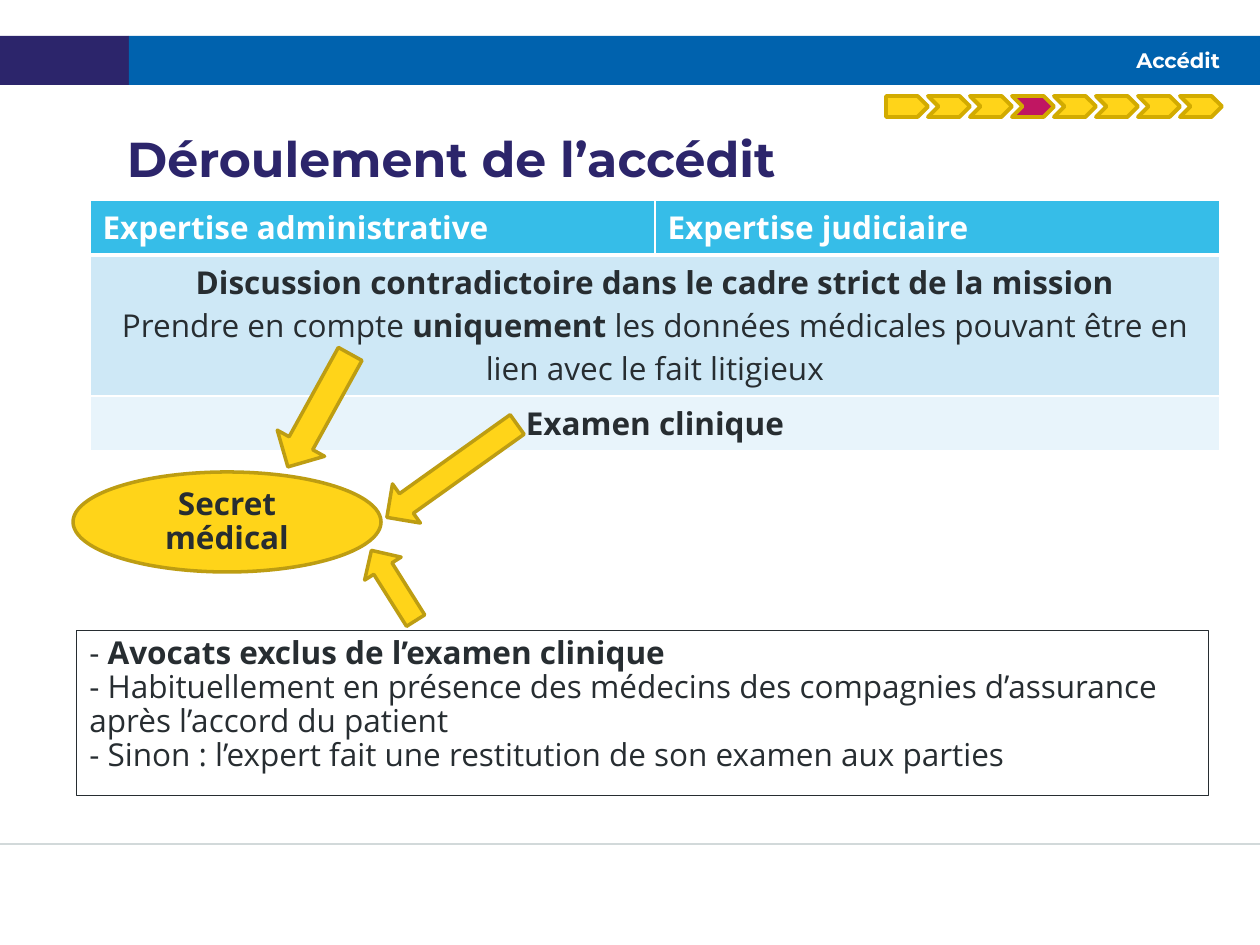
from lxml.etree import SubElement
from pptx import Presentation
from pptx.dml.color import RGBColor
from pptx.enum.shapes import MSO_CONNECTOR, MSO_SHAPE
from pptx.enum.text import MSO_ANCHOR, MSO_AUTO_SIZE, PP_ALIGN
from pptx.oxml import parse_xml
from pptx.oxml.ns import qn
from pptx.util import Pt

PX = 914400 / 126
NAVY, BLUE, WHITE, INK = "2C256B", "0062AE", "FFFFFF", "272D31"
YELLOW, GOLD, MAGENTA = "FFD419", "BD9D12", "C01662"
BODY = {"name": "Open Sans", "size": Pt(18), "bold": False}
BOLD = {**BODY, "bold": True}
TITLE = {"name": "Montserrat", "size": Pt(28), "bold": True}
HEADER = {**TITLE, "size": Pt(12)}
A_NS = "http://schemas.openxmlformats.org/drawingml/2006/main"


def px(n):
    return round(n * PX)


def rgb(value):
    return RGBColor.from_string(value)


def set_attrs(obj, values):
    for name, value in values.items():
        setattr(obj, name, value)


def write(tf, paragraphs, color, **para):
    """Each paragraph is a list of (text, font format) runs."""
    for i, runs in enumerate(paragraphs):
        p = tf.paragraphs[0] if i == 0 else tf.add_paragraph()
        set_attrs(p, para)
        for text, fmt in runs:
            r = p.add_run()
            r.text = text
            set_attrs(r.font, fmt)
            r.font.color.rgb = rgb(color)


def no_insets(tf):
    set_attrs(tf, {"margin_left": 0, "margin_top": 0, "margin_right": 0,
                   "margin_bottom": 0, "word_wrap": True})


def add_shape(s, kind, box, fill=None, line=None, width=2, rotation=0):
    sp = s.shapes.add_shape(kind, *map(px, box))
    sp.shadow.inherit = False
    sp.rotation = rotation
    if fill:
        sp.fill.solid()
        sp.fill.fore_color.rgb = rgb(fill)
    else:
        sp.fill.background()
    if line:
        sp.line.color.rgb = rgb(line)
        sp.line.width = Pt(width)
    else:
        sp.line.fill.background()
    return sp


def add_rule(s, x1, y1, x2, y2, color):
    line = s.shapes.add_connector(MSO_CONNECTOR.STRAIGHT, *map(px, (x1, y1, x2, y2)))
    line.line.color.rgb = rgb(color)
    line.line.width = Pt(0.75)
    SubElement(line.element.spPr, qn("a:effectLst"))


def style_cell(cell, fill, bottom):
    tc_pr = cell._tc.get_or_add_tcPr()
    for side, width in (("L", 1), ("R", 1), ("T", 1), ("B", bottom)):
        tc_pr.append(parse_xml(
            f'<a:ln{side} xmlns:a="{A_NS}" w="{Pt(width)}"><a:solidFill>'
            f'<a:srgbClr val="{WHITE}"/></a:solidFill></a:ln{side}>'))
    cell.fill.solid()
    cell.fill.fore_color.rgb = rgb(fill)


def add_comparison(s):
    table = s.shapes.add_table(3, 2, *map(px, (90, 200, 1130, 228))).table
    for col in table.columns:
        col.width = px(565)
    for row, height in zip(table.rows, (55, 141, 55)):
        row.height = px(height)
    for row, fill, bottom in ((0, "36BDE8", 3), (1, "CEE8F6", 1), (2, "E8F4FB", 1)):
        if row:
            table.cell(row, 0).merge(table.cell(row, 1))
        for col in range(2):
            style_cell(table.cell(row, col), fill, bottom)

    for col, text in enumerate(("Expertise administrative", "Expertise judiciaire")):
        write(table.cell(0, col).text_frame, [[(text, BOLD)]], WHITE)
    discussion = [
        [("Discussion contradictoire dans le cadre strict de la mission", BOLD)],
        [("Prendre en compte ", BODY), ("uniquement ", BOLD),
         ("les données médicales pouvant être en lien avec le fait litigieux", BODY)],
    ]
    for row, paragraphs in ((1, discussion), (2, [[("Examen clinique", BOLD)]])):
        write(table.cell(row, 0).text_frame, paragraphs, INK, alignment=PP_ALIGN.CENTER)


def add_progress(s, steps=8, current=3):
    for i in range(steps):
        kind = MSO_SHAPE.CHEVRON if i else MSO_SHAPE.PENTAGON
        fill = MAGENTA if i == current else YELLOW
        add_shape(s, kind, (886 + 42 * i, 96, 42, 21), fill, "D2AB00", 2.25)


def place_title(s):
    title = s.shapes.title
    set_attrs(title, {"left": px(139), "top": px(36), "width": px(1081), "height": px(49)})
    # Bring the title in front of the bars
    title.element.getparent().append(title.element)
    tf = title.text_frame
    no_insets(tf)
    set_attrs(tf, {"vertical_anchor": MSO_ANCHOR.MIDDLE, "auto_size": MSO_AUTO_SIZE.NONE})
    write(tf, [[("Accédit", HEADER)]], WHITE, alignment=PP_ALIGN.RIGHT)


def add_heading(s):
    tf = s.shapes.add_textbox(*map(px, (127, 135, 1093, 64))).text_frame
    no_insets(tf)
    write(tf, [[("Déroulement de l’accédit", TITLE)]], NAVY, line_spacing=0.9)


def add_note(s):
    sp = add_shape(s, MSO_SHAPE.RECTANGLE, (77, 631, 1132, 165), line=INK, width=0.5)
    sp.text_frame.vertical_anchor = MSO_ANCHOR.TOP
    write(sp.text_frame, [
        [("- ", BODY), ("Avocats exclus de l’examen clinique", BOLD)],
        [("- Habituellement en présence des médecins des compagnies d’assurance "
          "après l’accord du patient", BODY)],
        [("- Sinon : l’expert fait une restitution de son examen aux parties", BODY)],
    ], INK, alignment=PP_ALIGN.LEFT, line_spacing=0.9)


def main():
    prs = Presentation()
    prs.slide_width, prs.slide_height = px(1260), px(945)
    s = prs.slides.add_slide(prs.slide_layouts[5])

    # Header bars and footer rule
    add_shape(s, MSO_SHAPE.RECTANGLE, (0, 36, 129, 49), NAVY)
    add_shape(s, MSO_SHAPE.RECTANGLE, (129, 36, 1131, 49), BLUE)
    add_rule(s, 0, 844, 1260, 844, "D2D9DA")
    place_title(s)
    add_progress(s)

    # Main content
    add_heading(s)
    add_comparison(s)
    add_note(s)

    # Medical secrecy and the arrows pointing to it
    secret = add_shape(s, MSO_SHAPE.OVAL, (73, 472, 308, 100), YELLOW, GOLD)
    secret.text_frame.vertical_anchor = MSO_ANCHOR.MIDDLE
    write(secret.text_frame, [[("Secret médical", BOLD)]], INK,
          alignment=PP_ALIGN.CENTER, line_spacing=0.9)
    for box, angle in (((428, 391, 48, 160), 54.5),
                       ((292, 346, 54, 129), 28.9),
                       ((372, 544, 43, 83), 147.8)):
        add_shape(s, MSO_SHAPE.DOWN_ARROW, box, YELLOW, GOLD, rotation=angle)

    prs.save("out.pptx")


if __name__ == "__main__":
    main()
